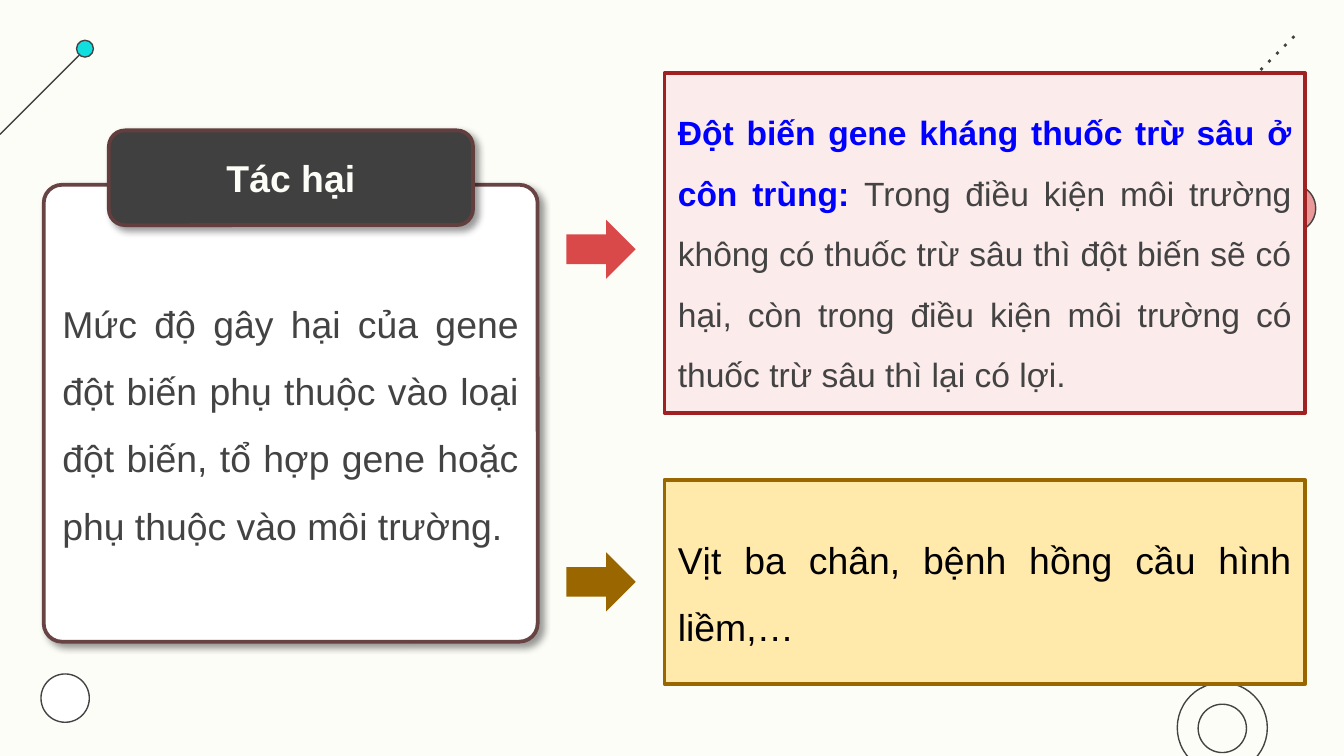
from lxml import etree
from pptx import Presentation
from pptx import util as u
from pptx.dml.color import RGBColor
from pptx.enum import dml, shapes, text
from pptx.oxml import ns

PX = 4572
CREAM = RGBColor(0xFD, 0xFD, 0xF8)
WHITE = RGBColor(0xFF, 0xFF, 0xFF)
BLACK = RGBColor(0x00, 0x00, 0x00)
INK = RGBColor(0x43, 0x43, 0x43)
CHARCOAL = RGBColor(0x40, 0x40, 0x40)
CYAN = RGBColor(0x11, 0xDF, 0xDF)
PINK = RGBColor(0xEA, 0x99, 0x99)
PLUM = RGBColor(0x67, 0x43, 0x43)
DARK_PLUM = RGBColor(0x62, 0x3E, 0x3E)
BLUSH = RGBColor(0xFB, 0xEB, 0xEB)
CRIMSON = RGBColor(0xA0, 0x21, 0x21)
RED = RGBColor(0xD9, 0x49, 0x49)
BLUE = RGBColor(0x00, 0x00, 0xFF)
SAND = RGBColor(0xFF, 0xE9, 0xAB)
BROWN = RGBColor(0x99, 0x66, 0x00)

presentation = Presentation()
presentation.slide_width = u.Emu(2000 * PX)
presentation.slide_height = u.Emu(1125 * PX)
slide = presentation.slides.add_slide(presentation.slide_layouts[6])
slide.background.fill.solid()
slide.background.fill.fore_color.rgb = CREAM


def draw_shape(kind, box, fill, line, width):
    shape = slide.shapes.add_shape(kind, *[u.Emu(value * PX) for value in box])
    shape.shadow.inherit = False
    for target, color in ((shape.fill, fill), (shape.line.fill, line)):
        if color is None:
            target.background()
        else:
            target.solid()
            target.fore_color.rgb = color
    if line is not None:
        shape.line.width = u.Pt(width)
    return shape


def write_text(shape, runs, paragraph_format):
    frame = shape.text_frame
    frame.word_wrap = True
    frame.vertical_anchor = text.MSO_ANCHOR.MIDDLE
    paragraph = frame.paragraphs[0]
    for name, value in paragraph_format.items():
        setattr(paragraph, name, value)
    for words, size, color, bold in runs:
        run = paragraph.add_run()
        run.text = words
        run.font.color.rgb = color
        for name, value in {"name": "Arial", "size": u.Pt(size), "bold": bold}.items():
            setattr(run.font, name, value)


for box, fill in (
    ((114, 60, 25, 25), CYAN),
    ((1886, 274, 72, 72), PINK),
    ((1752, 1016, 134, 134), None),
    ((1783, 1048, 72, 72), None),
    ((61, 1003, 72, 72), WHITE),
):
    draw_shape(shapes.MSO_SHAPE.OVAL, box, fill, INK, 0.75)

for ends, width, dash in (
    ((118, 82, 0, 200), 0.75, "solid"),
    ((1926, 54, 1798, 182), 1.5, "dot"),
):
    connector = slide.shapes.add_connector(
        shapes.MSO_CONNECTOR.STRAIGHT, *[u.Emu(value * PX) for value in ends]
    )
    connector.line.color.rgb = INK
    connector.line.width = u.Pt(width)
    connector.line.dash_style = dml.MSO_LINE.SOLID
    properties = connector._element.spPr
    properties.find(".//" + ns.qn("a:prstDash")).set("val", dash)
    etree.SubElement(properties, ns.qn("a:effectLst"))

BODY = {"alignment": text.PP_ALIGN.JUSTIFY, "line_spacing": 1.5}
HEADING = {"alignment": text.PP_ALIGN.CENTER}

harm_runs = [(
    "Mức độ gây hại của gene đột biến phụ thuộc vào loại đột biến, "
    "tổ hợp gene hoặc phụ thuộc vào môi trường.", 20, INK, False,
)]
title_runs = [("Tác hại", 20, CREAM, True)]
insect_runs = [
    ("Đột biến gene kháng thuốc trừ sâu ở côn trùng: ", 18, BLUE, True),
    (
        "Trong điều kiện môi trường không có thuốc trừ sâu thì đột biến sẽ có hại, "
        "còn trong điều kiện môi trường có thuốc trừ sâu thì lại có lợi.", 18, INK, False,
    ),
]
example_runs = [("Vịt ba chân, bệnh hồng cầu hình liềm,…", 20, BLACK, False)]

for box, corner, fill, line, runs, paragraph_format in (
    ((65, 275, 735, 680), 0.04, WHITE, PLUM, harm_runs, BODY),
    ((162, 194, 542, 141), 0.17, CHARCOAL, DARK_PLUM, title_runs, HEADING),
):
    card = draw_shape(shapes.MSO_SHAPE.ROUNDED_RECTANGLE, box, fill, line, 2)
    card.adjustments[0] = corner
    effects = card._element.spPr.find(ns.qn("a:effectLst"))
    shadow = etree.SubElement(
        effects, ns.qn("a:outerShdw"), blurRad=str(u.Pt(4)), dist=str(u.Pt(3)),
        dir=str(45 * 60000), algn="tl", rotWithShape="0",
    )
    shadow_color = etree.SubElement(shadow, ns.qn("a:srgbClr"), val=str(BLACK))
    etree.SubElement(shadow_color, ns.qn("a:alpha"), val="40000")
    write_text(card, runs, paragraph_format)

for top, height, fill, line, runs, arrow_top, arrow_fill in (
    (109, 506, BLUSH, CRIMSON, insect_runs, 327, RED),
    (714, 304, SAND, BROWN, example_runs, 822, BROWN),
):
    panel = draw_shape(shapes.MSO_SHAPE.RECTANGLE, (989, top, 953, height), fill, line, 2)
    write_text(panel, runs, BODY)
    draw_shape(shapes.MSO_SHAPE.RIGHT_ARROW, (843, arrow_top, 103, 88), arrow_fill, None, 0)

presentation.save("out.pptx")
